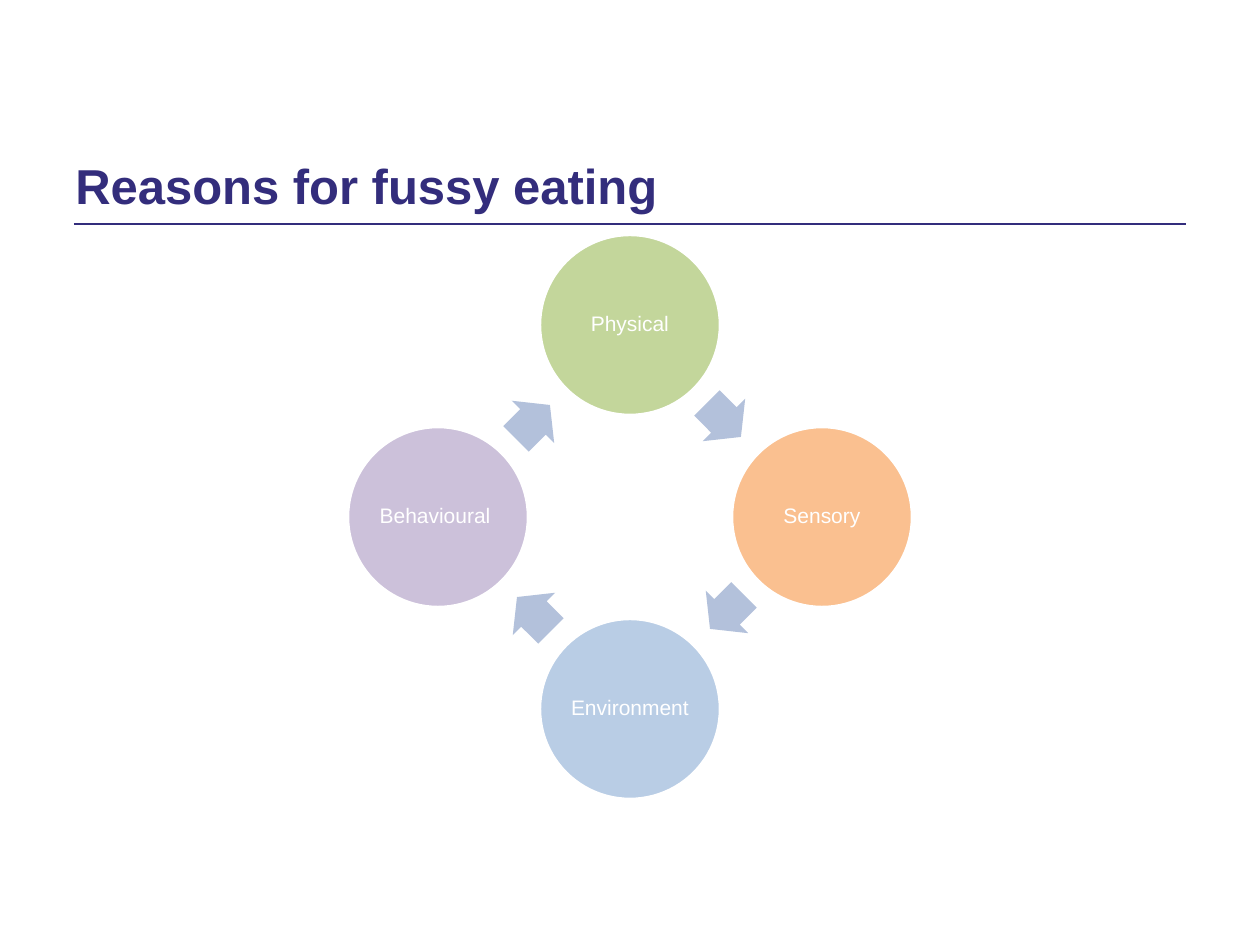
from dataclasses import dataclass

from pptx import Presentation
from pptx.dml.color import RGBColor
from pptx.enum.shapes import MSO_CONNECTOR, MSO_SHAPE
from pptx.enum.text import MSO_ANCHOR as Anchor, PP_ALIGN as Align
from pptx.oxml.ns import qn
from pptx.util import Emu, Pt

PX = 914400 // 126
FONT = "Arial"
NAVY, WHITE, ARROW_BLUE = "332D7C", "FFFFFF", "B3C1DB"
CENTRE_X, CENTRE_Y = 630, 517
ORBIT = 192
DIAMETER = 181
ARROW_WIDTH, ARROW_HEIGHT = 48, 60


@dataclass(frozen=True)
class Step:
    label: str
    fill: str
    direction: tuple[int, int]     # from the cycle centre to the circle
    arrow_offset: tuple[int, int]  # from the cycle centre to the arrow after it


STEPS = [
    Step("Physical", "C3D69B", (0, -1), (94, -97)),
    Step("Sensory", "FAC090", (1, 0), (97, 95)),
    Step("Environment", "B9CDE5", (0, 1), (-96, 97)),
    Step("Behavioural ", "CCC1DA", (-1, 0), (-97, -95)),
]


def px(length: float) -> Emu:
    return Emu(round(length * PX))


def colour(value: str) -> RGBColor:
    return RGBColor.from_string(value)


def add_centred(page, kind: MSO_SHAPE, x: int, y: int, width: int, height: int, fill: str):
    shape = page.shapes.add_shape(
        kind, px(x - width / 2), px(y - height / 2), px(width), px(height))
    shape.shadow.inherit = False
    shape.fill.solid()
    shape.fill.fore_color.rgb = colour(fill)
    return shape


def set_font(para, size: int, value: str, bold: bool = False) -> None:
    para.font.name = FONT
    para.font.size = Pt(size)
    para.font.bold = bold
    para.font.color.rgb = colour(value)


def draw_title(page, text: str) -> None:
    box = page.shapes.add_textbox(px(63), px(145), px(1134), px(79))
    frame = box.text_frame
    frame.word_wrap = True
    frame.vertical_anchor = Anchor.MIDDLE
    para = frame.paragraphs[0]
    para.text = text
    set_font(para, 28, NAVY, bold=True)


def draw_rule(page) -> None:
    rule = page.shapes.add_connector(
        MSO_CONNECTOR.STRAIGHT, px(74), px(224), px(1186), px(224))
    rule.line.color.rgb = colour(NAVY)
    rule.line.width = Pt(1)
    properties = rule._element.spPr
    properties.append(properties.makeelement(qn("a:effectLst"), {}))


def draw_circle(page, step: Step) -> None:
    across, down = step.direction
    circle = add_centred(page, MSO_SHAPE.OVAL, CENTRE_X + across * ORBIT,
                         CENTRE_Y + down * ORBIT, DIAMETER, DIAMETER, step.fill)
    circle.line.color.rgb = colour(WHITE)
    circle.line.width = Pt(2)
    frame = circle.text_frame
    frame.word_wrap = True
    frame.vertical_anchor = Anchor.MIDDLE
    frame.margin_left = frame.margin_right = px(2)
    frame.margin_top = frame.margin_bottom = px(2)
    para = frame.paragraphs[0]
    para.text = step.label
    para.alignment = Align.CENTER
    para.line_spacing = 0.9
    set_font(para, 12, WHITE)


def draw_arrow(page, step: Step, rotation: int) -> None:
    across, down = step.arrow_offset
    arrow = add_centred(page, MSO_SHAPE.RIGHT_ARROW, CENTRE_X + across,
                        CENTRE_Y + down, ARROW_WIDTH, ARROW_HEIGHT, ARROW_BLUE)
    arrow.adjustments[0] = 0.6
    arrow.adjustments[1] = 0.5
    arrow.rotation = rotation
    arrow.line.fill.background()


def main() -> None:
    deck = Presentation()
    deck.slide_width, deck.slide_height = px(1260), px(945)
    page = deck.slides.add_slide(deck.slide_layouts[6])

    # Heading
    draw_rule(page)
    draw_title(page, "Reasons for fussy eating")

    # Cycle of reasons, clockwise from the top
    for index, step in enumerate(STEPS):
        draw_circle(page, step)
        draw_arrow(page, step, 45 + 90 * index)

    deck.save("out.pptx")


if __name__ == "__main__":
    main()
